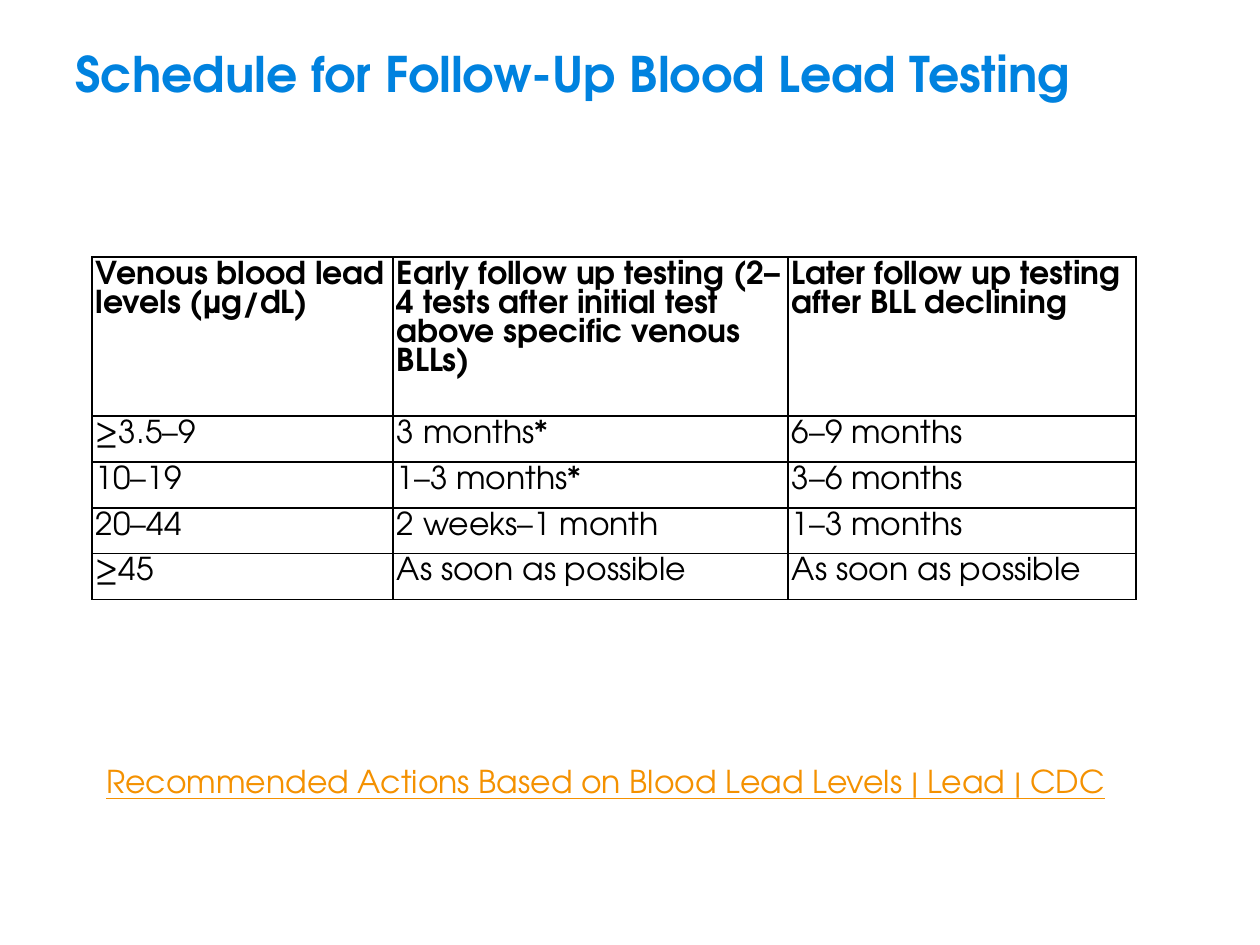
from dataclasses import dataclass

from lxml import etree
from pptx import Presentation
from pptx.dml.color import RGBColor
from pptx.enum.text import MSO_ANCHOR
from pptx.oxml.ns import qn
from pptx.util import Emu, Pt

MIDDLE, BOTTOM, TOP = MSO_ANCHOR.MIDDLE, MSO_ANCHOR.BOTTOM, MSO_ANCHOR.TOP
EMU_PER_PX = 914400 // 126
BLANK_LAYOUT = 6


@dataclass(frozen=True)
class Theme:
    font: str = "TeX Gyre Adventor"
    title: str = "0082DF"
    text: str = "000000"
    link: str = "F49100"
    paper: str = "FFFFFF"
    title_size: int = 28
    body_size: int = 18
    border: int = 1


THEME = Theme()

TITLE = "Schedule for Follow-Up Blood Lead Testing"
SCHEDULE = [
    ["Venous blood lead levels (µg/dL)",
     "Early follow up testing (2–4 tests after initial test above specific venous BLLs)",
     "Later follow up testing after BLL declining"],
    ["≥3.5–9", "3 months*", "6–9 months"],
    ["10–19", "1–3 months*", "3–6 months"],
    ["20–44", "2 weeks–1 month", "1–3 months"],
    ["≥45", "As soon as possible", "As soon as possible"],
]
SOURCE = "Recommended Actions Based on Blood Lead Levels | Lead | CDC"


def px(n):
    return Emu(n * EMU_PER_PX)


def write(tf, text, color, size, **formats):
    r = tf.paragraphs[0].add_run()
    r.text = text
    r.font.color.rgb = RGBColor.from_string(color)
    for name, value in {"name": THEME.font, "size": Pt(size), **formats}.items():
        setattr(r.font, name, value)


def add_line(s, box, text, color, size, anchor, **formats):
    """One line of text in a box."""
    tf = s.shapes.add_textbox(*map(px, box)).text_frame
    tf.word_wrap = True
    tf.vertical_anchor = anchor
    write(tf, text, color, size, **formats)


def add_borders(cell):
    props = cell._tc.get_or_add_tcPr()
    for i, side in enumerate(("lnL", "lnR", "lnT", "lnB")):
        line = etree.Element(qn(f"a:{side}"), w=str(Pt(THEME.border)))
        fill = etree.SubElement(line, qn("a:solidFill"))
        etree.SubElement(fill, qn("a:srgbClr"), val=THEME.text)
        props.insert(i, line)


def add_schedule(s, box, rows, widths, header_height, row_height):
    """Table with a bold header row and ruled cells."""
    table = s.shapes.add_table(len(rows), len(widths), *map(px, box)).table
    for column, width in zip(table.columns, widths):
        column.width = px(width)
    for i, values in enumerate(rows):
        table.rows[i].height = px(row_height if i else header_height)
        for j, value in enumerate(values):
            cell = table.cell(i, j)
            for side in ("left", "right", "top", "bottom"):
                setattr(cell, f"margin_{side}", px(4))
            cell.vertical_anchor = TOP
            cell.fill.solid()
            cell.fill.fore_color.rgb = RGBColor.from_string(THEME.paper)
            add_borders(cell)
            write(cell.text_frame, value, THEME.text, THEME.body_size, bold=i == 0)


def main():
    prs = Presentation()
    prs.slide_width, prs.slide_height = px(1260), px(945)
    s = prs.slides.add_slide(prs.slide_layouts[BLANK_LAYOUT])

    # Title
    add_line(s, (63, 33, 1134, 80), TITLE, THEME.title, THEME.title_size,
             MIDDLE, bold=True)
    # Testing schedule
    add_schedule(s, (92, 257, 1044, 278), SCHEDULE, (301, 395, 348), 126, 38)
    # Source line
    add_line(s, (94, 756, 1061, 50), SOURCE, THEME.link, THEME.body_size,
             BOTTOM, underline=True)

    prs.save("out.pptx")


if __name__ == "__main__":
    main()
